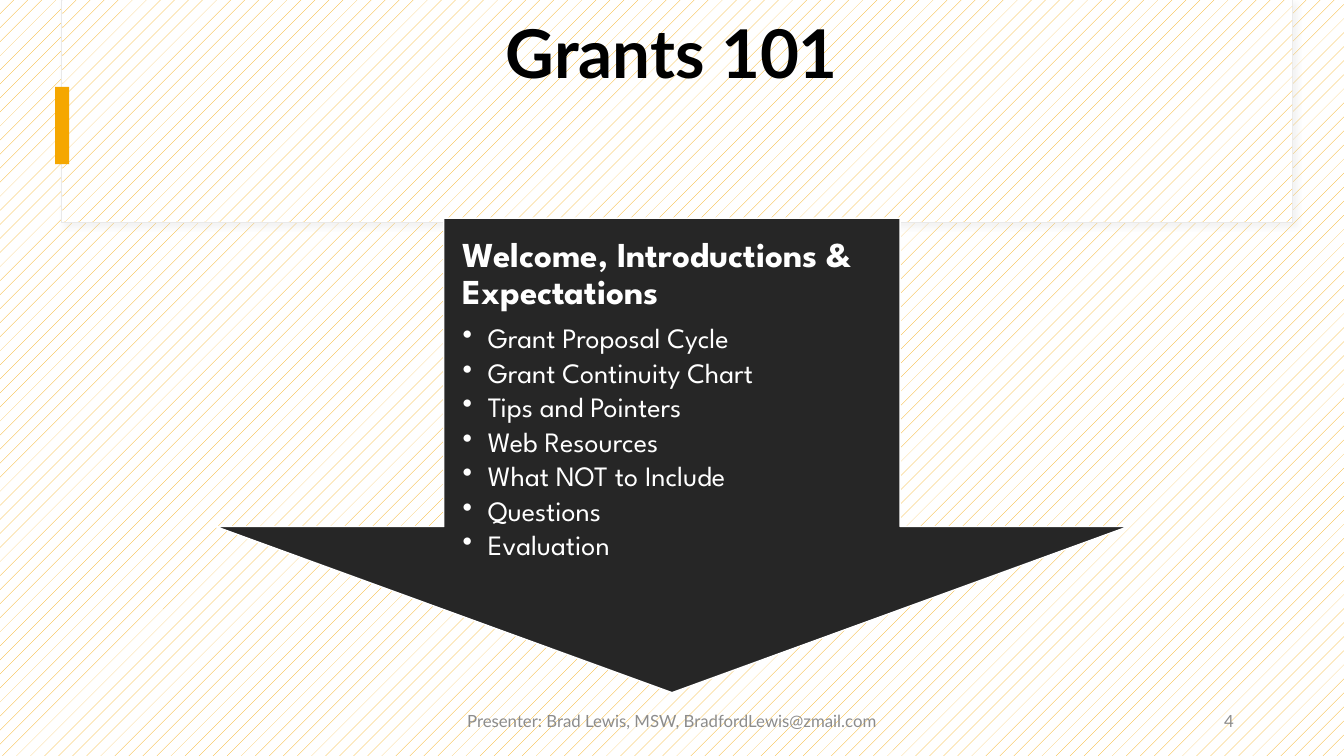
from dataclasses import dataclass

from lxml import etree
from pptx import Presentation
from pptx.dml.color import RGBColor
from pptx.enum.dml import MSO_PATTERN
from pptx.enum.shapes import MSO_SHAPE
from pptx.enum.text import MSO_ANCHOR, MSO_AUTO_SIZE, PP_ALIGN
from pptx.oxml.ns import qn
from pptx.util import Pt

RECTANGLE, DOWN_ARROW = MSO_SHAPE.RECTANGLE, MSO_SHAPE.DOWN_ARROW
DOTS = MSO_PATTERN.PERCENT_5
MIDDLE, NO_AUTOFIT = MSO_ANCHOR.MIDDLE, MSO_AUTO_SIZE.NONE
LEFT, CENTER, RIGHT = PP_ALIGN.LEFT, PP_ALIGN.CENTER, PP_ALIGN.RIGHT


@dataclass(frozen=True)
class Theme:
    accent: RGBColor = RGBColor(0xF5, 0xA7, 0x00)
    paper: RGBColor = RGBColor(0xFF, 0xFF, 0xFF)
    ink: RGBColor = RGBColor(0x00, 0x00, 0x00)
    arrow: RGBColor = RGBColor(0x26, 0x26, 0x26)
    muted: RGBColor = RGBColor(0x8C, 0x8C, 0x8C)
    border: RGBColor = RGBColor(0xE9, 0xE9, 0xE9)
    shadow: RGBColor = RGBColor(0xD9, 0xD9, 0xD9)
    title_font: str = "Lato"
    agenda_font: str = "League Spartan"
    title_size: float = 48
    heading_size: float = 25
    topic_size: float = 20
    footer_size: float = 12


@dataclass(frozen=True)
class Box:
    left: float
    top: float
    width: float
    height: float

    def emu(self) -> tuple:
        return Pt(self.left), Pt(self.top), Pt(self.width), Pt(self.height)


@dataclass(frozen=True)
class FooterItem:
    text: str
    box: Box
    align: PP_ALIGN


THEME = Theme()
SLIDE_WIDTH, SLIDE_HEIGHT = 960, 540
INDENT = 18
AGENDA_INSET = 13.5

TITLE_BOX = Box(0, 0, SLIDE_WIDTH, 80.64)
BORDER_BOX = Box(43.92, 0, 879.12, 159.12)
PANEL_BOX = Box(44.64, 0, 878.4, 158.4)
MARKER_BOX = Box(39.4, 62, 10, 55.3)
ARROW_BOX = Box(154, 155.75, 652, 339)
AGENDA_BOX = Box(317, 155.75, 326, 280)

HEADING = "Welcome, Introductions & Expectations"
TOPICS = [
    "Grant Proposal Cycle",
    "Grant Continuity Chart",
    "Tips and Pointers",
    "Web Resources",
    "What NOT to Include",
    "Questions",
    "Evaluation",
]
FOOTER = [
    FooterItem("Presenter: Brad Lewis, MSW, BradfordLewis@zmail.com",
               Box(318, 500.5, 324, 28.75), CENTER),
    FooterItem("4", Box(672.5, 500.5, 216, 28.75), RIGHT),
]


def style(paragraph, font: str, size: float, color: RGBColor,
          align: PP_ALIGN = LEFT, bold: bool = False) -> None:
    paragraph.alignment = align
    paragraph.font.name = font
    paragraph.font.size = Pt(size)
    paragraph.font.bold = bold
    paragraph.font.color.rgb = color


def fill_dots(fill) -> None:
    fill.patterned()
    fill.pattern = DOTS
    fill.fore_color.rgb = THEME.accent
    fill.back_color.rgb = THEME.paper


def add_block(slide, preset: MSO_SHAPE, box: Box, color: RGBColor | None = None,
              line: RGBColor | None = None, line_width: float = 0.75):
    """A preset shape; without a colour it takes the dotted fill."""
    block = slide.shapes.add_shape(preset, *box.emu())
    block.shadow.inherit = False
    if color is None:
        fill_dots(block.fill)
    else:
        block.fill.solid()
        block.fill.fore_color.rgb = color
    if line is None:
        block.line.fill.background()
    else:
        block.line.color.rgb = line
        block.line.width = Pt(line_width)
    return block


def add_soft_shadow(block) -> None:
    effects = block.element.spPr.find(qn("a:effectLst"))
    shadow = etree.SubElement(effects, qn("a:outerShdw"), blurRad=str(Pt(4)),
                              dist=str(Pt(3)), dir=str(45 * 60000))
    color = etree.SubElement(shadow, qn("a:srgbClr"), val=str(THEME.shadow))
    etree.SubElement(color, qn("a:alpha"), val="30000")


def add_bullet(paragraph) -> None:
    properties = paragraph._p.get_or_add_pPr()
    properties.set("marL", str(Pt(INDENT)))
    properties.set("indent", str(-Pt(INDENT)))
    bullet = etree.Element(qn("a:buChar"), char="•")
    defaults = properties.find(qn("a:defRPr"))
    if defaults is None:
        properties.append(bullet)
    else:
        defaults.addprevious(bullet)


def add_agenda(slide) -> None:
    frame = slide.shapes.add_textbox(*AGENDA_BOX.emu()).text_frame
    frame.word_wrap = True
    frame.margin_left = frame.margin_right = Pt(AGENDA_INSET)
    frame.margin_top = frame.margin_bottom = Pt(AGENDA_INSET)
    heading = frame.paragraphs[0]
    heading.text = HEADING
    heading.line_spacing = 0.9
    heading.space_after = Pt(0.35 * THEME.heading_size)
    style(heading, THEME.agenda_font, THEME.heading_size, THEME.paper, bold=True)
    for text in TOPICS:
        topic = frame.add_paragraph()
        topic.text = text
        topic.level = 1
        topic.line_spacing = 0.9
        topic.space_after = Pt(0.15 * THEME.topic_size)
        style(topic, THEME.agenda_font, THEME.topic_size, THEME.paper)
        add_bullet(topic)


def place_title(slide) -> None:
    title = slide.shapes.title
    title.left, title.top, title.width, title.height = TITLE_BOX.emu()
    frame = title.text_frame
    frame.text = "Grants 101"
    frame.auto_size = NO_AUTOFIT
    frame.vertical_anchor = MIDDLE
    frame.paragraphs[0].line_spacing = 0.9
    style(frame.paragraphs[0], THEME.title_font, THEME.title_size, THEME.ink,
          CENTER, bold=True)
    # Bring the title in front of the header panel
    title.element.getparent().append(title.element)


def add_footer_item(slide, item: FooterItem) -> None:
    frame = slide.shapes.add_textbox(*item.box.emu()).text_frame
    frame.word_wrap = True
    frame.vertical_anchor = MIDDLE
    frame.text = item.text
    style(frame.paragraphs[0], THEME.title_font, THEME.footer_size, THEME.muted,
          item.align)


def main() -> None:
    deck = Presentation()
    deck.slide_width, deck.slide_height = Pt(SLIDE_WIDTH), Pt(SLIDE_HEIGHT)
    slide = deck.slides.add_slide(deck.slide_layouts[5])
    fill_dots(slide.background.fill)

    # Header panel with its accent marker
    add_soft_shadow(add_block(slide, RECTANGLE, BORDER_BOX, line=THEME.border))
    add_block(slide, RECTANGLE, PANEL_BOX)
    add_block(slide, RECTANGLE, MARKER_BOX, THEME.accent)

    # Agenda on the arrow
    arrow = add_block(slide, DOWN_ARROW, ARROW_BOX, THEME.arrow, THEME.paper, 1)
    arrow.adjustments[0], arrow.adjustments[1] = 0.5, 0.35
    add_agenda(slide)

    # Title and footer
    place_title(slide)
    for item in FOOTER:
        add_footer_item(slide, item)

    deck.save("out.pptx")


if __name__ == "__main__":
    main()
